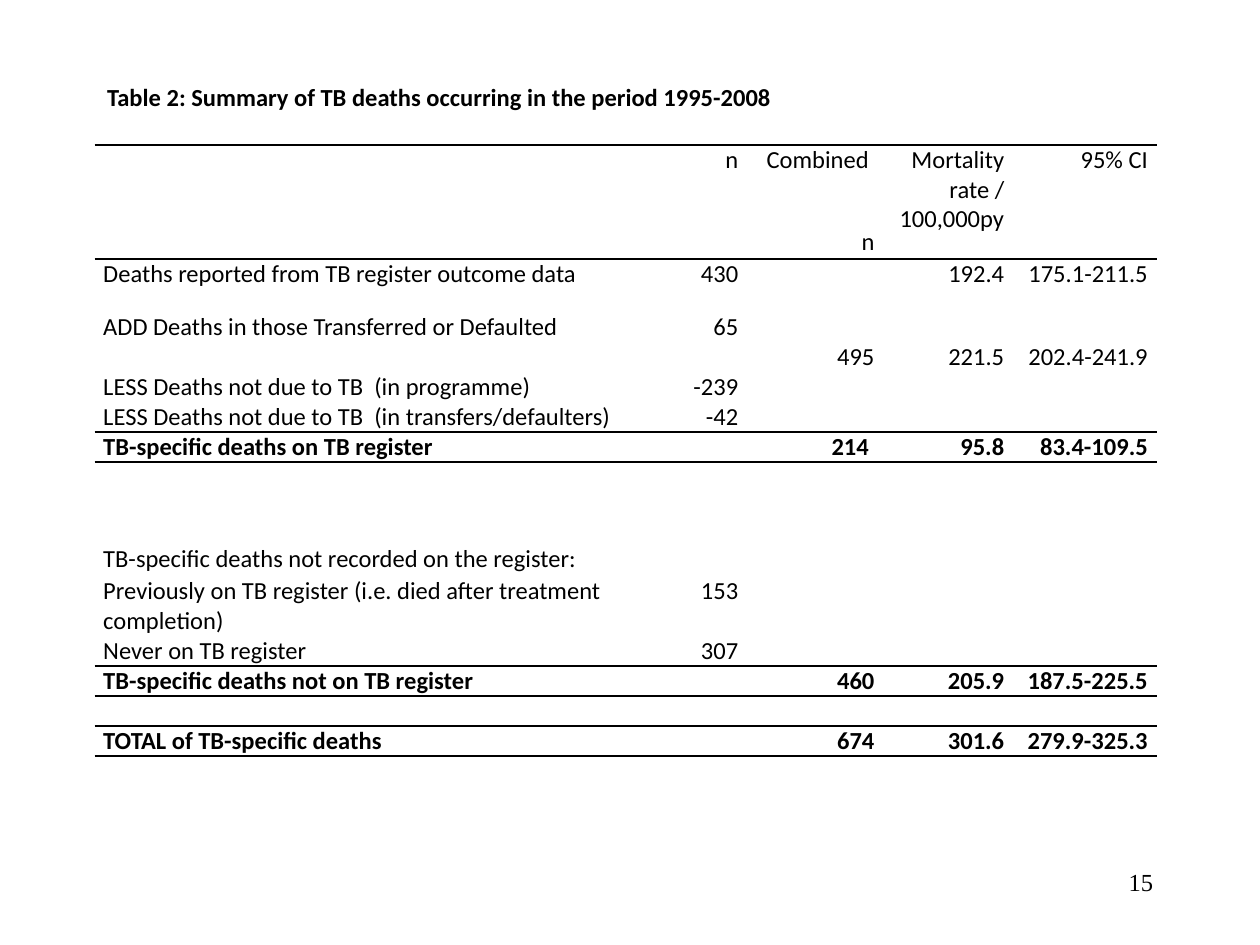
from lxml.etree import SubElement
from pptx import Presentation
from pptx.dml.color import RGBColor
from pptx.enum.text import MSO_ANCHOR, MSO_AUTO_SIZE, PP_ALIGN
from pptx.oxml.ns import qn
from pptx.util import Pt

BLACK = RGBColor(0, 0, 0)
BODY_FONT = "Calibri"
NUMBER_FONT = "Times New Roman"
TEXT_SIZE = 14

COLUMN_WIDTHS = [331.9, 41, 77.8, 74.2, 82.1]
LINE, SPACED, TALL = 17.1, 30.3, 65.4  # row heights

# (height, bold, cells)
ROWS = [
    (TALL, False, ["", "n", "Combined \nn", "Mortality rate / 100,000py", "95% CI"]),
    (SPACED, False, ["Deaths reported from TB register outcome data",
                     "430", "", "192.4", "175.1-211.5"]),
    (LINE, False, ["ADD Deaths in those Transferred or Defaulted", "65", "", "", ""]),
    (LINE, False, ["", "", "495", "221.5", "202.4-241.9"]),
    (LINE, False, ["LESS Deaths not due to TB  (in programme)", "-239", "", "", ""]),
    (LINE, False, ["LESS Deaths not due to TB  (in transfers/defaulters)", "-42", "", "", ""]),
    (LINE, True, ["TB-specific deaths on TB register", "", "214 ", "95.8", "83.4-109.5"]),
    (TALL, False, ["TB-specific deaths not recorded on the register:", "", "", "", ""]),
    (2 * LINE, False, ["Previously on TB register (i.e. died after treatment completion)",
                       "153", "", "", ""]),
    (LINE, False, ["Never on TB register", "307", "", "", ""]),
    (LINE, True, ["TB-specific deaths not on TB register", "", "460", "205.9", "187.5-225.5"]),
    (LINE, False, ["", "", "", "", ""]),
    (LINE, True, ["TOTAL of TB-specific deaths", "", "674", "301.6", "279.9-325.3"]),
]
SUBHEADING_ROW = 7
SUBHEADING_DROP = 47

# Line width by row boundary, counted from the top edge of the table
RULES = {0: 1.5, 1: 1.5, 6: 1, 7: 1, 10: 1, 11: 1, 12: 1.5, 13: 1.5}


def format_runs(paragraph, font_name, bold=False):
    for run in paragraph.runs:
        run.font.name = font_name
        run.font.size = Pt(TEXT_SIZE)
        run.font.bold = bold
        run.font.color.rgb = BLACK


def set_borders(cell, top, bottom):
    """Draw horizontal rules of the given widths; None means no line."""
    properties = cell._tc.get_or_add_tcPr()
    for side, width in (("L", None), ("R", None), ("T", top), ("B", bottom)):
        border = SubElement(properties, qn(f"a:ln{side}"))
        if width is None:
            SubElement(border, qn("a:noFill"))
        else:
            border.set("w", str(Pt(width)))
            fill = SubElement(border, qn("a:solidFill"))
            SubElement(fill, qn("a:srgbClr")).set("val", str(BLACK))


def fill_cell(cell, text, alignment, bold):
    cell.margin_left = cell.margin_right = Pt(5)
    cell.margin_top = cell.margin_bottom = 0
    cell.text_frame.text = text
    for paragraph in cell.text_frame.paragraphs:
        paragraph.alignment = alignment
        paragraph.space_before = Pt(24)
        paragraph.space_after = Pt(6)
        format_runs(paragraph, BODY_FONT, bold)
        if not text:  # keeps an empty cell from stretching its row
            paragraph._p.get_or_add_endParaRPr().set("sz", str(TEXT_SIZE * 100))


def add_deaths_table(slide):
    table = slide.shapes.add_table(
        len(ROWS), len(COLUMN_WIDTHS), Pt(54), Pt(82.8),
        Pt(sum(COLUMN_WIDTHS)), Pt(sum(height for height, _, _ in ROWS))).table
    table.first_row = table.horz_banding = False
    for column, width in zip(table.columns, COLUMN_WIDTHS):
        column.width = Pt(width)
    for r, (height, bold, texts) in enumerate(ROWS):
        table.rows[r].height = Pt(height)
        for c, text in enumerate(texts):
            cell = table.cell(r, c)
            fill_cell(cell, text, PP_ALIGN.RIGHT if c else PP_ALIGN.LEFT, bold)
            set_borders(cell, RULES.get(r), RULES.get(r + 1))
            cell.fill.background()
    table.cell(SUBHEADING_ROW, 0).margin_top = Pt(SUBHEADING_DROP)


def set_title(slide, text):
    title = slide.shapes.title
    title.left, title.top, title.width, title.height = Pt(54), Pt(43.2), Pt(607), Pt(24.5)
    frame = title.text_frame
    frame.text = text
    frame.word_wrap = True
    frame.auto_size = MSO_AUTO_SIZE.NONE
    frame.vertical_anchor = MSO_ANCHOR.MIDDLE
    frame.paragraphs[0].alignment = PP_ALIGN.LEFT
    format_runs(frame.paragraphs[0], BODY_FONT, bold=True)


def add_page_number(slide, number):
    frame = slide.shapes.add_textbox(Pt(516), Pt(492), Pt(150), Pt(36)).text_frame
    frame.word_wrap = True
    frame.text = number
    frame.paragraphs[0].alignment = PP_ALIGN.RIGHT
    format_runs(frame.paragraphs[0], NUMBER_FONT)


def main():
    presentation = Presentation()
    presentation.slide_width, presentation.slide_height = Pt(720), Pt(540)
    slide = presentation.slides.add_slide(presentation.slide_layouts.get_by_name("Title Only"))
    add_page_number(slide, "15")
    add_deaths_table(slide)
    set_title(slide, "Table 2: Summary of TB deaths occurring in the period 1995-2008")
    presentation.save("out.pptx")


if __name__ == "__main__":
    main()
